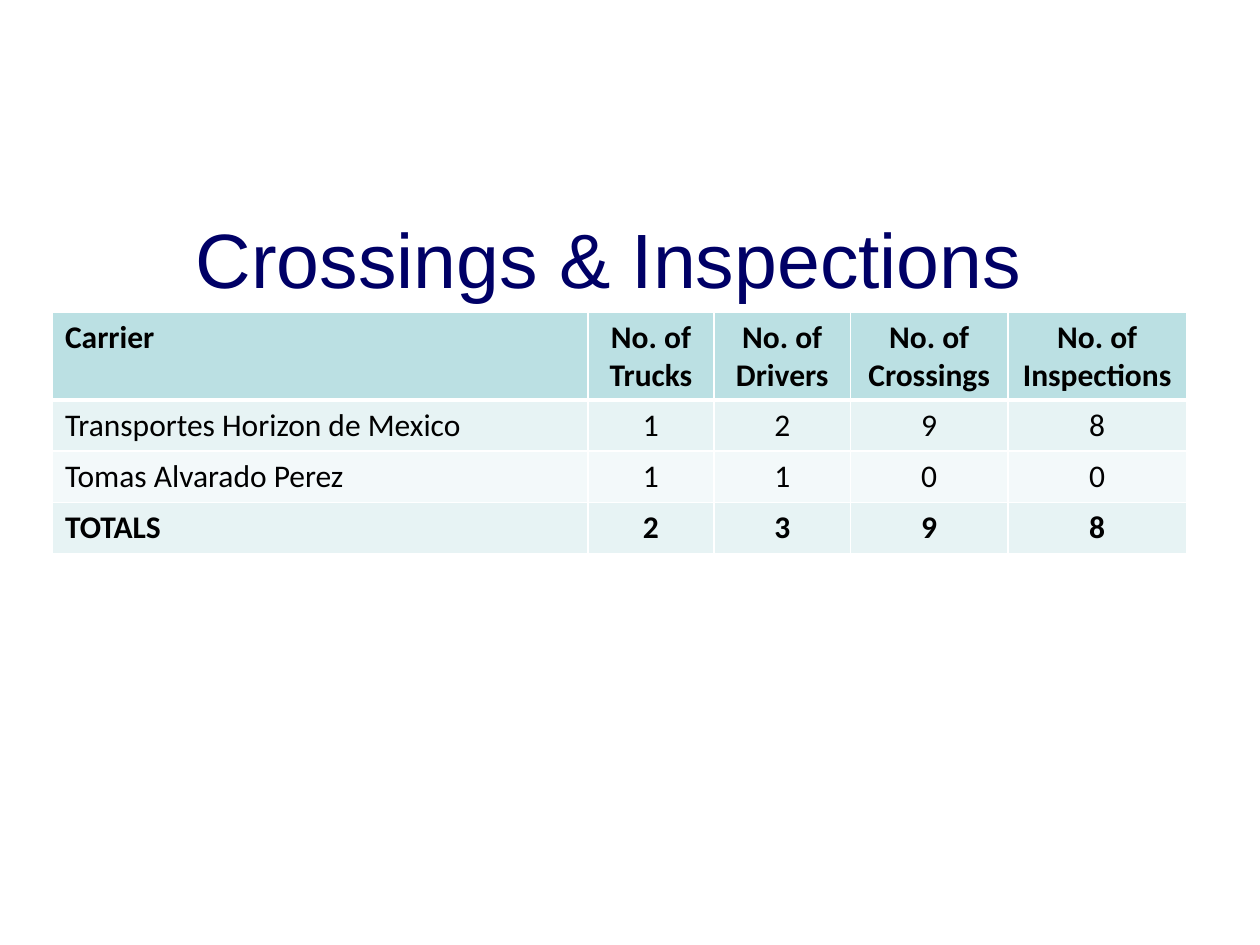
from lxml import etree
from pptx import Presentation
from pptx import util as u
from pptx.dml.color import RGBColor
from pptx.enum import text
from pptx.oxml.ns import qn

GRID = u.Inches(1) / 12  # the slide is 120 columns by 90 rows


def cells(count):
    """Length of a number of grid columns or rows."""
    return u.Emu(round(count * GRID))


def color(value):
    return RGBColor.from_string(value)


class SlideBuilder:
    title_font, body_font = "Arial", "Calibri"
    navy, black, white = "000066", "000000", "FFFFFF"
    header_fill, band_fills = "BBE0E3", ("E7F3F4", "F3F9FA")

    def __init__(self, deck):
        self.page = deck.slides.add_slide(deck.slide_layouts[6])

    def set_text(self, frame, words, font, size, ink, align, bold=False):
        frame.text = words
        para = frame.paragraphs[0]
        para.alignment = align
        span = para.runs[0].font
        span.name, span.size, span.bold = font, u.Pt(size), bold
        span.color.rgb = color(ink)

    def title(self, words, left, top, width, height):
        box = self.page.shapes.add_textbox(*map(cells, (left, top, width, height)))
        frame = box.text_frame
        frame.word_wrap = True
        frame.vertical_anchor = text.MSO_ANCHOR.MIDDLE
        self.set_text(frame, words, self.title_font, 44, self.navy, text.PP_ALIGN.CENTER)

    def border(self, cell, top, bottom):
        """White edges; they must come before the fill in the cell's XML."""
        properties = cell._tc.get_or_add_tcPr()
        for side, points in (("L", 1), ("R", 1), ("T", top), ("B", bottom)):
            line = etree.SubElement(properties, qn(f"a:ln{side}"), w=str(int(u.Pt(points))))
            fill = etree.SubElement(line, qn("a:solidFill"))
            etree.SubElement(fill, qn("a:srgbClr"), val=self.white)

    def table(self, rows, left, top, widths, heights):
        frame = self.page.shapes.add_table(
            len(rows), len(widths), cells(left), cells(top),
            cells(sum(widths)), cells(sum(heights)))
        table = frame.table
        for column, width in zip(table.columns, widths):
            column.width = cells(width)
        last = len(rows) - 1
        for r, values in enumerate(rows):
            table.rows[r].height = cells(heights[r])
            for c, value in enumerate(values):
                cell = table.cell(r, c)
                # The thick rule under the header is shared with the row below it
                self.border(cell, top=3 if r == 1 else 1, bottom=3 if r == 0 else 1)
                cell.fill.solid()
                cell.fill.fore_color.rgb = color(
                    self.band_fills[(r - 1) % 2] if r else self.header_fill)
                align = text.PP_ALIGN.CENTER if c else text.PP_ALIGN.LEFT
                self.set_text(cell.text_frame, value, self.body_font, 18,
                              self.black, align, bold=r in (0, last))


def main():
    deck = Presentation()
    deck.slide_width, deck.slide_height = cells(120), cells(90)
    slide = SlideBuilder(deck)
    slide.title("Crossings & Inspections", 4, 17, 108, 15)
    slide.table(
        [["Carrier", "No. of Trucks", "No. of Drivers", "No. of Crossings", "No. of Inspections"],
         ["Transportes Horizon de Mexico", "1", "2", "9", "8"],
         ["Tomas Alvarado Perez", "1", "1", "0", "0"],
         ["TOTALS", "2", "3", "9", "8"]],
        left=5, top=29.7, widths=[51, 12, 13, 15, 17], heights=[8.4] + [4.87] * 3)
    deck.save("out.pptx")


if __name__ == "__main__":
    main()
